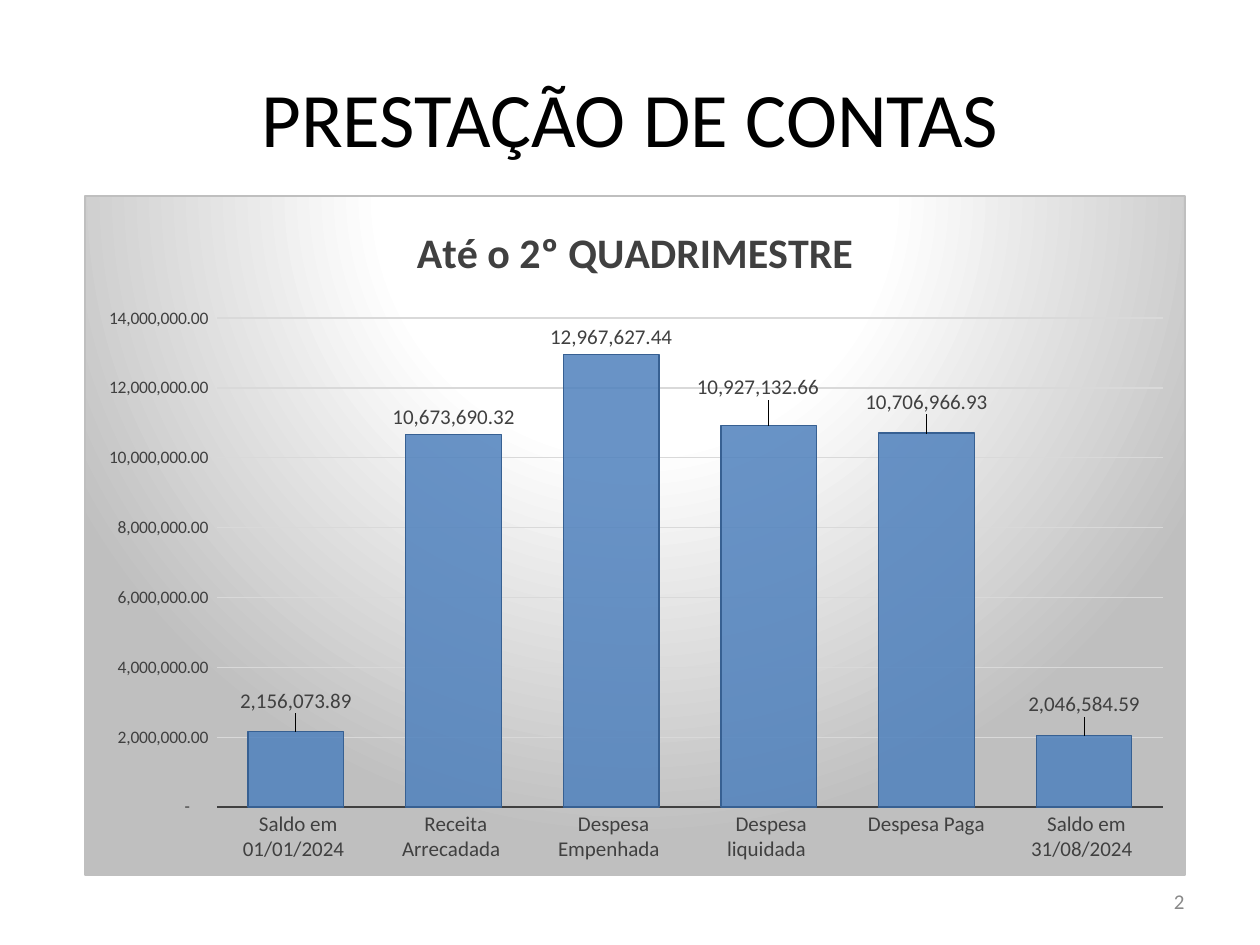
from dataclasses import dataclass

from lxml import etree
from pptx import Presentation
from pptx.chart.data import CategoryChartData
from pptx.dml.color import RGBColor
from pptx.enum.chart import XL_CHART_TYPE, XL_LABEL_POSITION, XL_TICK_MARK
from pptx.enum.text import MSO_ANCHOR, PP_ALIGN
from pptx.oxml import parse_xml
from pptx.oxml.ns import qn
from pptx.util import Pt

COLUMNS = XL_CHART_TYPE.COLUMN_CLUSTERED
OUTSIDE_END = XL_LABEL_POSITION.OUTSIDE_END
NO_TICK = XL_TICK_MARK.NONE
MIDDLE = MSO_ANCHOR.MIDDLE
CENTER, RIGHT = PP_ALIGN.CENTER, PP_ALIGN.RIGHT
TITLE_ONLY_LAYOUT = 5

NAMESPACES = (
    'xmlns:a="http://schemas.openxmlformats.org/drawingml/2006/main" '
    'xmlns:c="http://schemas.openxmlformats.org/drawingml/2006/chart"'
)
ACCOUNTING = '_(* #,##0.00_);_(* \\(#,##0.00\\);_(* "-"??_);_(@_)'

BALANCES = {
    " Saldo em 01/01/2024 ": 2156073.89,
    " Receita Arrecadada ": 10673690.32,
    " Despesa Empenhada ": 12967627.44,
    " Despesa liquidada ": 10927132.66,
    " Despesa Paga ": 10706966.93,
    " Saldo em 31/08/2024 ": 2046584.59,
}
# Label shifts by point, as fractions of the chart's width and height
LABEL_SHIFTS = {0: (0, -0.02), 3: (-0.01, -0.03), 4: (0, -0.02), 5: (0, -0.02)}


@dataclass(frozen=True)
class Theme:
    font: str = "Calibri"
    title: str = "000000"
    chart_text: str = "404040"
    page_number: str = "898989"
    grid: str = "D9D9D9"
    column: str = "4F81BD"
    column_line: str = "376092"
    glow: str = "FFFFFF"
    edge: str = "BFBFBF"
    title_size: int = 44
    chart_title_size: int = 24
    label_size: int = 12
    scale_size: int = 10


class SlideBuilder:
    def __init__(self, slide, theme):
        self.slide = slide
        self.theme = theme

    def style_font(self, font, size, color, bold=False):
        font.name = self.theme.font
        font.size = Pt(size)
        font.bold = bold
        font.color.rgb = RGBColor.from_string(color)

    def style_line(self, line, color, width):
        line.color.rgb = RGBColor.from_string(color)
        line.width = Pt(width)

    def add_text(self, frame, text, size, color, alignment):
        frame.word_wrap = True
        frame.vertical_anchor = MIDDLE
        paragraph = frame.paragraphs[0]
        paragraph.alignment = alignment
        run = paragraph.add_run()
        run.text = text
        self.style_font(run.font, size, color)

    def title(self, text, left, top, width, height):
        shape = self.slide.shapes.title
        shape.left, shape.top = Pt(left), Pt(top)
        shape.width, shape.height = Pt(width), Pt(height)
        self.add_text(shape.text_frame, text, self.theme.title_size, self.theme.title, CENTER)

    def page_number(self, text, left, top, width, height):
        box = self.slide.shapes.add_textbox(Pt(left), Pt(top), Pt(width), Pt(height))
        self.add_text(box.text_frame, text, self.theme.label_size, self.theme.page_number, RIGHT)

    def column_chart(self, heading, values, left, top, width, height):
        data = CategoryChartData(number_format=ACCOUNTING)
        data.categories = list(values)
        data.add_series("Series 1", list(values.values()))
        chart = self.slide.shapes.add_chart(
            COLUMNS, Pt(left), Pt(top), Pt(width), Pt(height), data).chart
        self.style_font(chart.font, self.theme.scale_size, self.theme.title)
        chart.has_legend = False
        self.chart_title(chart, heading)
        self.chart_axes(chart)
        self.chart_columns(chart.plots[0])
        self.chart_labels(chart.plots[0].series[0])
        self.chart_background(chart)
        self.chart_plot_area(chart)

    def chart_title(self, chart, heading):
        chart.has_title = True
        run = chart.chart_title.text_frame.paragraphs[0].add_run()
        run.text = heading
        self.style_font(run.font, self.theme.chart_title_size, self.theme.chart_text, bold=True)

    def chart_axes(self, chart):
        theme = self.theme
        for axis, size in ((chart.category_axis, theme.label_size),
                           (chart.value_axis, theme.scale_size)):
            axis.major_tick_mark = axis.minor_tick_mark = NO_TICK
            self.style_font(axis.tick_labels.font, size, theme.chart_text)
        self.style_line(chart.category_axis.format.line, theme.chart_text, 1.5)
        scale = chart.value_axis
        scale.minimum_scale, scale.maximum_scale = 0, 14_000_000
        scale.major_unit = 2_000_000
        scale.format.line.fill.background()
        scale.tick_labels.number_format = ACCOUNTING
        scale.tick_labels.number_format_is_linked = False
        self.style_line(scale.major_gridlines.format.line, theme.grid, 0.75)

    def chart_columns(self, plot):
        plot.gap_width = 65
        plot.vary_by_categories = False
        series = plot.series[0]
        series.invert_if_negative = False
        fill = series.format.fill
        fill.solid()
        fill.fore_color.rgb = RGBColor.from_string(self.theme.column)
        color = series._element.find(".//" + qn("a:srgbClr"))
        etree.SubElement(color, qn("a:alpha"), val="85000")
        self.style_line(series.format.line, self.theme.column_line, 0.75)

    def chart_labels(self, series):
        theme = self.theme
        labels = series.data_labels
        labels.show_value = True
        labels.position = OUTSIDE_END
        labels.number_format = ACCOUNTING
        labels.number_format_is_linked = False
        self.style_font(labels.font, theme.label_size, theme.chart_text)
        for index in LABEL_SHIFTS:
            label = series.points[index].data_label
            self.style_font(label.font, theme.label_size, theme.chart_text)
            label.position = OUTSIDE_END
        moved_labels = series._element.findall(".//" + qn("c:dLbl"))
        for element, (x, y) in zip(moved_labels, LABEL_SHIFTS.values()):
            element.insert(1, manual_layout(x=x, y=y))
            element.insert(2, etree.Element(
                qn("c:numFmt"), formatCode=ACCOUNTING, sourceLinked="0"))

    def chart_background(self, chart):
        """Fill the chart area with a glow that fades out from above its top edge."""
        glow, edge = self.theme.glow, self.theme.edge
        stops = "".join(
            f'<a:gs pos="{position}"><a:srgbClr val="{color}"/></a:gs>'
            for position, color in ((0, glow), (39000, glow), (100000, edge)))
        chart.element.find(qn("c:chart")).addnext(parse_xml(
            f'<c:spPr {NAMESPACES}><a:gradFill><a:gsLst>{stops}</a:gsLst>'
            '<a:path path="circle">'
            '<a:fillToRect l="50000" t="-80000" r="50000" b="180000"/></a:path></a:gradFill>'
            f'<a:ln w="{Pt(0.75)}"><a:solidFill><a:srgbClr val="{edge}"/></a:solidFill></a:ln>'
            '</c:spPr>'))

    def chart_plot_area(self, chart):
        plot_area = chart.element.find(".//" + qn("c:plotArea"))
        for layout in plot_area.findall(qn("c:layout")):
            plot_area.remove(layout)
        plot_area.insert(0, manual_layout(
            layoutTarget="inner", xMode="edge", yMode="edge",
            x=0.12, y=0.18, w=0.86, h=0.72))


def manual_layout(**settings):
    children = "".join(f'<c:{name} val="{value}"/>' for name, value in settings.items())
    return parse_xml(
        f'<c:layout {NAMESPACES}><c:manualLayout>{children}</c:manualLayout></c:layout>')


def main():
    presentation = Presentation()
    presentation.slide_width, presentation.slide_height = Pt(720), Pt(540)
    slide = presentation.slides.add_slide(presentation.slide_layouts[TITLE_ONLY_LAYOUT])
    builder = SlideBuilder(slide, Theme())
    builder.page_number("2", 516, 500.5, 168, 28.75)
    builder.title("PRESTAÇÃO DE CONTAS", 36, 21.6, 648, 90)
    builder.column_chart("Até o 2º QUADRIMESTRE", BALANCES, 48.25, 111.6, 629.25, 388.8)
    presentation.save("out.pptx")


if __name__ == "__main__":
    main()
